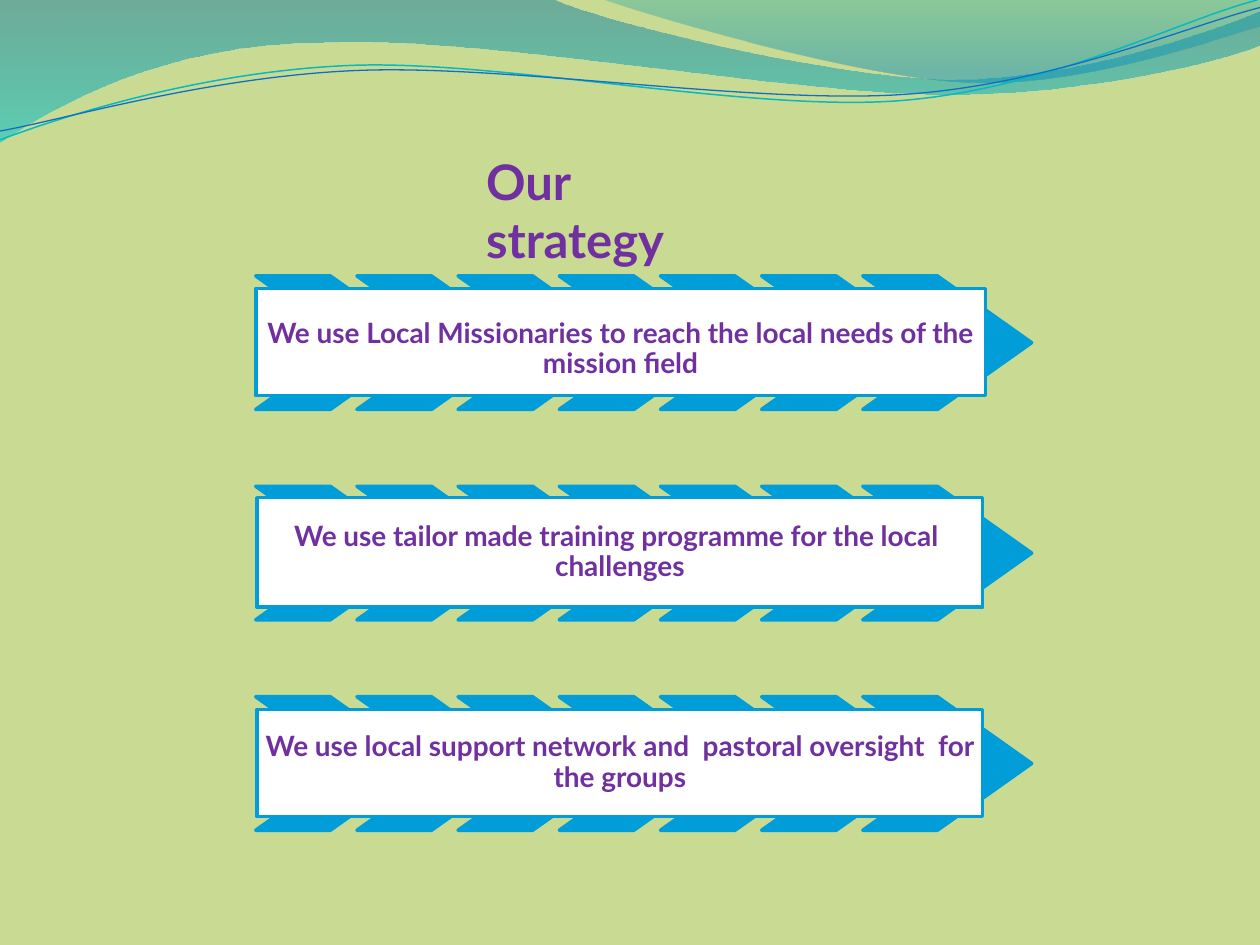
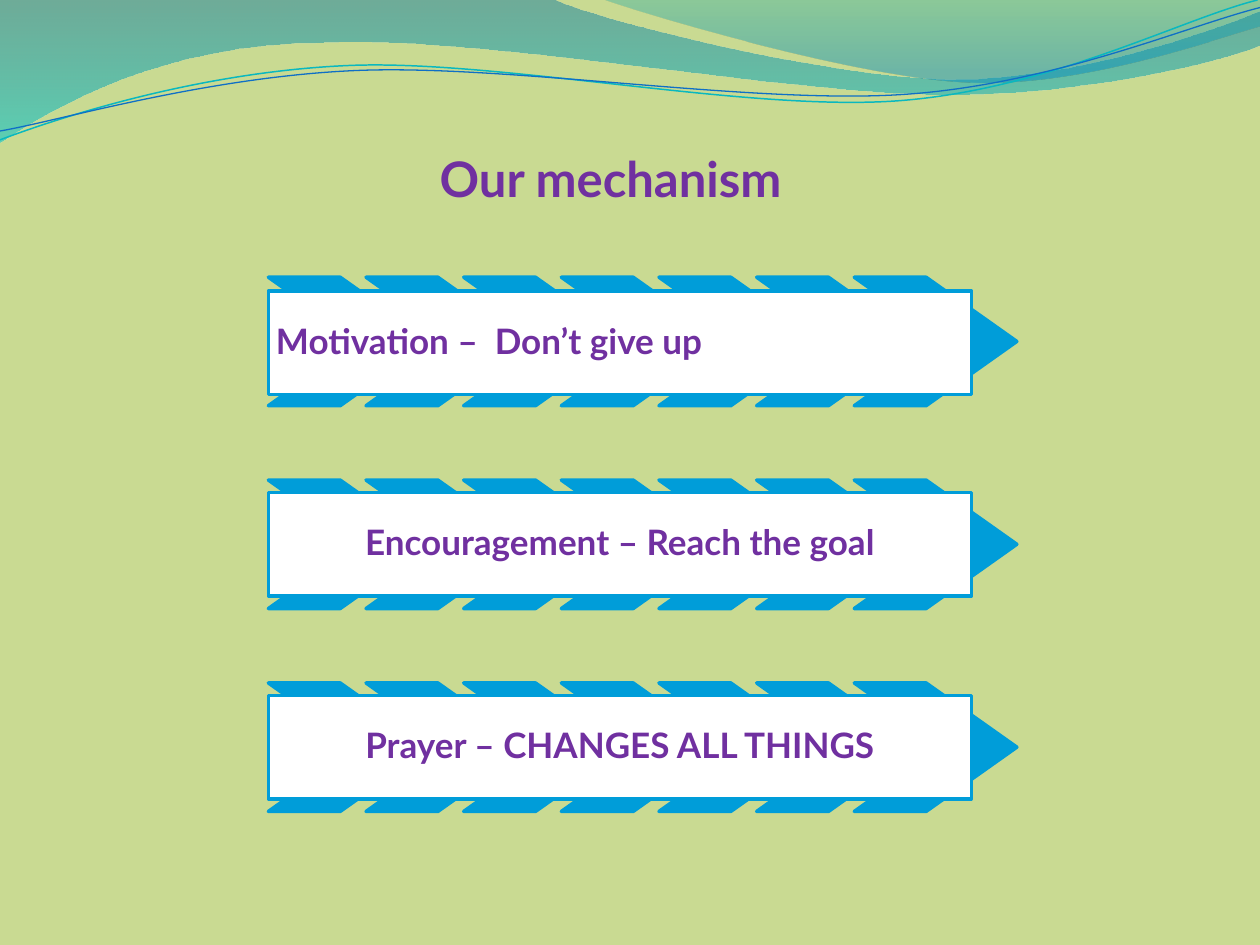
"""Build the strategy and mechanism slides with their shared wave header."""
from lxml import etree
from pptx import Presentation
from pptx.dml.color import RGBColor
from pptx.enum.shapes import MSO_SHAPE
from pptx.enum.text import MSO_ANCHOR, PP_ALIGN
from pptx.oxml.ns import qn
from pptx.util import Inches, Pt

BACKGROUND = RGBColor(0xC9, 0xDA, 0x92)
BLUE = RGBColor(0x00, 0x9D, 0xD9)
WHITE = RGBColor(0xFF, 0xFF, 0xFF)
PURPLE = RGBColor(0x70, 0x30, 0xA0)
DEEP_BLUE = RGBColor(0x00, 0x74, 0xA1)
AQUA = RGBColor(0x00, 0xC6, 0xCF)
TEAL = RGBColor(0x00, 0xA1, 0xA9)
SEA_BLUE = RGBColor(0x00, 0x8B, 0xBF)
CYAN_LINE = RGBColor(0x0A, 0xB8, 0xBF)
NAVY_LINE = RGBColor(0x0F, 0x6F, 0xC6)
FONT = "Lato"
CHEVRONS_PER_ROW = 7
CHEVRON_DEPTH = 0.706

SLIDES = [
    {
        "title": "Our strategy", "title_box": (3.76, 1.15, 2.34, 0.57),
        "title_align": PP_ALIGN.LEFT,
        "chevron": (2.03, 2.19, 1.34, 1.06), "chevron_pitch": 0.803,
        "row_pitch": 1.67, "text_size": 16, "inset": 0.04,
        "rows": [
            {"text": "We use Local Missionaries to reach the local needs of the mission field",
             "panel": (2.03, 2.29, 5.79, 0.85), "top_inset": 0.16},
            {"text": "We use tailor made training programme for the local  challenges",
             "panel": (2.04, 3.95, 5.76, 0.87)},
            {"text": "We use local support network and  pastoral oversight  for the groups",
             "panel": (2.04, 5.63, 5.76, 0.85)},
        ],
    },
    {
        "title": "Our mechanism", "title_box": (3.35, 1.13, 2.99, 0.57),
        "title_align": PP_ALIGN.CENTER,
        "chevron": (2.13, 2.2, 1.29, 1.02), "chevron_pitch": 0.775,
        "row_pitch": 1.61, "text_size": 20, "inset": 0.06,
        "rows": [
            {"text": "Motivation –  Don’t give up",
             "panel": (2.13, 2.31, 5.58, 0.82), "align": PP_ALIGN.LEFT},
            {"text": "Encouragement – Reach the goal",
             "panel": (2.13, 3.91, 5.58, 0.82)},
            {"text": "Prayer – CHANGES ALL THINGS",
             "panel": (2.13, 5.52, 5.58, 0.82)},
        ],
    },
]

WAVES = [
    {"start": (0, 0), "stops": [(0, DEEP_BLUE, 45), (1, AQUA, 55)],
     "segments": [
         [(4.4, 0)],
         [(4.76, 0.17), (6.64, 0.63), (7.58, 0.63)],
         [(8.53, 0.63), (9.58, 0.26), (10, 0.09)],
         [(10, 0.36)],
         [(9.83, 0.44), (8.7, 0.76), (7.46, 0.75)],
         [(6.22, 0.75), (3.82, 0.28), (2.57, 0.34)],
         [(1.29, 0.35), (0.46, 0.83), (0, 1.13)]]},
    {"start": (4.79, 0), "stops": [(0, TEAL, 30), (0.8, SEA_BLUE, 45)],
     "segments": [
         [(5.09, 0.11), (6.82, 0.62), (7.69, 0.65)],
         [(8.56, 0.69), (9.61, 0.32), (10, 0.21)],
         [(10, 0)]]},
    {"start": (0, 1.11), "line": (CYAN_LINE, 0.85),
     "segments": [
         [(0.48, 0.93), (1.58, 0.57), (2.77, 0.52)],
         [(3.95, 0.47), (5.93, 0.89), (7.13, 0.8)],
         [(8.33, 0.71), (9.38, 0.15), (9.98, 0)]]},
    {"start": (0, 1.04), "line": (NAVY_LINE, 0.75),
     "segments": [
         [(0.47, 0.96), (1.64, 0.61), (2.83, 0.56)],
         [(4.03, 0.51), (5.97, 0.83), (7.17, 0.75)],
         [(8.36, 0.67), (9.41, 0.21), (10, 0.06)]]},
]


def to_emu(point):
    return tuple(Inches(value) for value in point)


def bend_segments(ribbon, segments):
    steps = iter(list(ribbon._element.spPr.iter(qn("a:lnTo"))))
    for segment in segments:
        first, *others = [next(steps) for _ in segment]
        if others:
            first.tag = qn("a:cubicBezTo")
            for step in others:
                first.append(step[0])
                step.getparent().remove(step)


def fill_gradient(shape, stops):
    shape.fill.gradient()
    shape.fill.gradient_angle = 270
    for stop, (position, color, _) in zip(shape.fill.gradient_stops, stops):
        stop.position = position
        stop.color.rgb = color
    for color_node, (_, _, opacity) in zip(shape._element.spPr.iter(qn("a:srgbClr")), stops):
        etree.SubElement(color_node, qn("a:alpha")).set("val", str(opacity * 1000))


def add_waves(slide):
    for wave in WAVES:
        points = [to_emu(point) for segment in wave["segments"] for point in segment]
        builder = slide.shapes.build_freeform(*to_emu(wave["start"]))
        builder.add_line_segments(points, close="stops" in wave)
        ribbon = builder.convert_to_shape()
        bend_segments(ribbon, wave["segments"])
        ribbon.shadow.inherit = False
        if "stops" in wave:
            fill_gradient(ribbon, wave["stops"])
            ribbon.line.fill.background()
        else:
            color, width = wave["line"]
            ribbon.fill.background()
            ribbon.line.color.rgb = color
            ribbon.line.width = Pt(width)


def write_text(frame, text, size, align):
    frame.word_wrap = True
    frame.text = text
    paragraph = frame.paragraphs[0]
    paragraph.alignment = align
    font = paragraph.runs[0].font
    font.name, font.size, font.bold = FONT, Pt(size), True
    font.color.rgb = PURPLE
    return paragraph


def add_block(slide, preset, box, fill):
    block = slide.shapes.add_shape(preset, *map(Inches, box))
    block.shadow.inherit = False
    block.fill.solid()
    block.fill.fore_color.rgb = fill
    block.line.color.rgb = BLUE
    block.line.width = Pt(2)
    return block


def add_row(slide, content, index, row):
    left, top, width, height = content["chevron"]
    row_top = top + index * content["row_pitch"]
    for column in range(CHEVRONS_PER_ROW):
        chevron_left = left + column * content["chevron_pitch"]
        chevron = add_block(slide, MSO_SHAPE.CHEVRON,
                            (chevron_left, row_top, width, height), BLUE)
        chevron.adjustments[0] = CHEVRON_DEPTH
    frame = add_block(slide, MSO_SHAPE.RECTANGLE, row["panel"], WHITE).text_frame
    inset = content["inset"]
    frame.margin_left = frame.margin_right = frame.margin_bottom = Inches(inset)
    frame.margin_top = Inches(row.get("top_inset", inset))
    frame.vertical_anchor = MSO_ANCHOR.MIDDLE
    statement = write_text(frame, row["text"], content["text_size"],
                           row.get("align", PP_ALIGN.CENTER))
    statement.line_spacing = 0.9


def add_title(slide, content):
    title = slide.shapes.add_textbox(*map(Inches, content["title_box"]))
    write_text(title.text_frame, content["title"], 28, content["title_align"])


def main():
    prs = Presentation()
    prs.slide_width, prs.slide_height = Inches(10), Inches(7.5)
    for content in SLIDES:
        slide = prs.slides.add_slide(prs.slide_layouts[6])
        slide.background.fill.solid()
        slide.background.fill.fore_color.rgb = BACKGROUND
        add_waves(slide)
        for index, row in enumerate(content["rows"]):
            add_row(slide, content, index, row)
        add_title(slide, content)
    prs.save("out.pptx")


if __name__ == "__main__":
    main()
